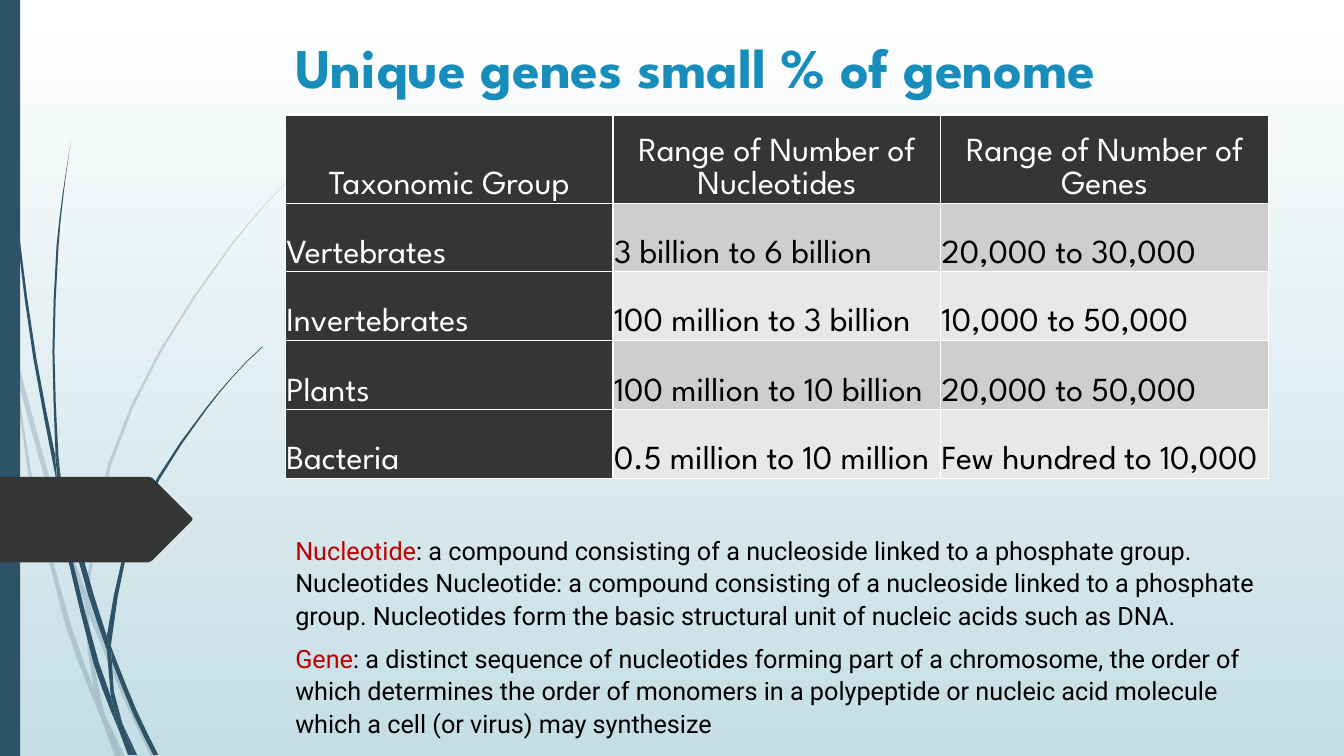
from dataclasses import dataclass
from math import dist
from typing import Any, NamedTuple

from lxml.etree import SubElement
from pptx import Presentation
from pptx.dml.color import RGBColor
from pptx.enum.shapes import MSO_SHAPE
from pptx.enum.text import MSO_ANCHOR, PP_ALIGN
from pptx.oxml import parse_xml
from pptx.oxml.ns import nsdecls, qn
from pptx.util import Inches, Pt

COLS, ROWS = 1333, 750
CELL = Inches(13.33) / COLS
LONG_BEND = 40
COLORS = {
    "white": "FFFFFF", "mist": "C5DEE5", "navy": "2E5369", "charcoal": "353535",
    "blue": "178DBB", "red": "C00000", "black": "000000",
    "band0": "CECECE", "band1": "E8E8E8",
}
FONTS = {
    "title": {"name": "League Spartan", "size": Pt(40), "bold": True},
    "table": {"name": "League Spartan", "size": Pt(24), "bold": False},
    "body": {"name": "Roboto", "size": Pt(18)},
}
CELL_FORMAT = {
    "vertical_anchor": MSO_ANCHOR.BOTTOM, "margin_left": Inches(0.01),
    "margin_right": Inches(0.01), "margin_top": Inches(0.01),
    "margin_bottom": Inches(0.01),
}
BODY_PARAGRAPH = {"line_spacing": 1.07, "space_after": Pt(8)}

Point = tuple[float, float]


class Area(NamedTuple):
    col: int
    row: int
    cols: int
    rows: int


class Run(NamedTuple):
    text: str
    color: str


@dataclass
class Outline:
    there: list[Point]
    back: list[Point]


PALE_GRASS = [
    Outline([(0, 282), (9, 322), (11, 350)], [(10, 344), (0, 299)]),
    Outline([(14, 345), (62, 520), (85, 586)], [(84, 599), (58, 522), (17, 376)]),
    Outline([(88, 596), (92, 607), (127, 692), (155, 751)],
            [(150, 751), (123, 694), (88, 610)]),
    Outline([(105, 711), (124, 751)], [(119, 751)]),
    Outline([(11, 350), (17, 376), (31, 469), (70, 619), (93, 683), (99, 707), (101, 714)],
            [(92, 693), (65, 621), (28, 470)]),
    Outline([(84, 599), (87, 646), (93, 683), (96, 692), (105, 711)],
            [(103, 706), (91, 646), (88, 610), (88, 608)]),
    Outline([(85, 586), (107, 461), (158, 348), (228, 244), (268, 197), (289, 175), (312, 153)],
            [(290, 175), (268, 198), (229, 245), (160, 349), (110, 462), (88, 584), (88, 596)]),
    Outline([(101, 714), (119, 751)], [(114, 751)]),
    Outline([(85, 586), (88, 596), (88, 610)], [(88, 608), (84, 599)]),
    Outline([(93, 683), (96, 692), (105, 711), (119, 751)], [(101, 714), (99, 707)]),
]
DARK_GRASS = [
    Outline([(3, 0), (4, 48), (7, 110), (17, 233), (33, 355), (56, 477), (57, 481)],
            [(55, 457), (55, 453), (36, 355), (19, 232), (8, 109), (5, 48), (4, 0)]),
    Outline([(60, 472), (93, 590), (106, 631), (106, 633)],
            [(106, 645), (88, 592), (64, 505)]),
    Outline([(110, 641), (113, 649), (136, 706), (157, 749)],
            [(152, 749), (132, 708), (111, 656)]),
    Outline([(57, 477), (64, 505), (72, 556), (98, 657), (110, 691), (116, 717), (117, 722)],
            [(111, 708), (93, 659), (68, 557)]),
    Outline([(60, 472), (58, 453), (54, 349), (58, 245), (63, 193), (70, 141)],
            [(62, 193), (56, 245), (52, 349), (55, 449)]),
    Outline([(122, 719), (136, 749)], [(133, 749)]),
    Outline([(55, 449), (60, 472), (64, 505)], [(57, 477), (55, 453)]),
    Outline([(106, 631), (122, 551), (156, 474), (204, 405), (231, 373), (245, 358), (260, 344)],
            [(261, 344), (245, 359), (231, 374), (205, 406), (158, 476), (125, 552),
             (111, 633), (110, 641)]),
    Outline([(117, 722), (131, 749)], [(127, 749)]),
    Outline([(106, 645), (109, 651), (111, 656), (113, 686), (121, 716), (122, 719)],
            [(116, 706), (110, 691)]),
    Outline([(106, 631), (110, 641), (111, 656)], [(109, 651), (106, 645)]),
    Outline([(110, 691), (116, 706), (122, 719), (133, 749)],
            [(130, 749), (117, 722), (116, 717)]),
]
PAGE_ARROW = Outline([(0, 473), (147, 473), (151, 474), (190, 513), (191, 515)],
                     [(190, 517), (151, 556), (147, 558), (0, 558)])

GENOMES = [
    ["Taxonomic Group", "Range of Number of Nucleotides", "Range of Number of Genes"],
    ["Vertebrates", "3 billion to 6 billion", "20,000 to 30,000"],
    ["Invertebrates", "100 million to 3 billion", "10,000 to 50,000"],
    ["Plants", "100 million to 10 billion", "20,000 to 50,000"],
    ["Bacteria", "0.5 million to 10 million", "Few hundred to 10,000"],
]
GENOME_ROWS = [87, 68, 68, 69, 68]
TITLE = [[Run("Unique genes small % of genome", "blue")]]
DEFINITIONS = [
    [Run("Nucleotide", "red"),
     Run(": a compound consisting of a nucleoside linked to a phosphate group. Nucleotides "
         "Nucleotide: a compound consisting of a nucleoside linked to a phosphate group. "
         "Nucleotides form the basic structural unit of nucleic acids such as DNA.", "black")],
    [Run("Gene", "red"),
     Run(": a distinct sequence of nucleotides forming part of a chromosome, the order of "
         "which determines the order of monomers in a polypeptide or nucleic acid molecule "
         "which a cell (or virus) may synthesize", "black")],
]


def rgb(name: str) -> RGBColor:
    return RGBColor.from_string(COLORS[name])


def emu(cells: float) -> int:
    return round(cells * CELL)


def apply(target: Any, values: dict[str, Any]) -> None:
    for name, value in values.items():
        setattr(target, name, value)


def paint(s: Any, color: str) -> None:
    s.shadow.inherit = False
    s.fill.solid()
    s.fill.fore_color.rgb = rgb(color)
    s.line.fill.background()


def bend(points: list[Point]) -> list[Point]:
    last = len(points) - 1
    slopes = []
    for i in range(len(points)):
        near = points[max(i - 1, 0):min(i + 1, last) + 1]
        span = sum(dist(a, b) for a, b in zip(near, near[1:])) or 1
        slopes.append([(b - a) / span for a, b in zip(near[0], near[-1])])
    curve = [points[0]]
    for i, (a, b) in enumerate(zip(points, points[1:])):
        length = dist(a, b)
        if length > LONG_BEND:
            x, y = ((a[k] + b[k]) / 2 + length * (slopes[i][k] - slopes[i + 1][k]) / 8
                    for k in (0, 1))
            curve.append((x, y))
        curve.append(b)
    return curve


def draw_outline(shapes: Any, points: list[Point], color: str) -> Any:
    corners = [(emu(x), emu(y)) for x, y in points]
    builder = shapes.build_freeform(*corners[0])
    builder.add_line_segments(corners[1:], close=True)
    s = builder.convert_to_shape()
    paint(s, color)
    return s


def draw_blade(shapes: Any, blade: Outline) -> Any:
    return draw_outline(shapes, bend(blade.there) + bend(blade.back), "navy")


def write(p: Any, runs: list[Run], font: str) -> None:
    for text, color in runs:
        r = p.add_run()
        r.text = text
        apply(r.font, FONTS[font])
        r.font.color.rgb = rgb(color)


def draw_text(shapes: Any, area: Area, paragraphs: list[list[Run]], font: str,
              anchor: MSO_ANCHOR, layout: dict[str, Any]) -> None:
    tf = shapes.add_textbox(*map(emu, area)).text_frame
    apply(tf, {"word_wrap": True, "vertical_anchor": anchor})
    for i, runs in enumerate(paragraphs):
        p = tf.add_paragraph() if i else tf.paragraphs[0]
        apply(p, layout)
        write(p, runs, font)


def add_borders(cell: Any) -> None:
    tc_pr = cell._tc.get_or_add_tcPr()
    for i, side in enumerate("LRTB"):
        tc_pr.insert(i, parse_xml(
            f'<a:ln{side} {nsdecls("a")} w="{Pt(1)}"><a:solidFill>'
            f'<a:srgbClr val="{COLORS["white"]}"/></a:solidFill></a:ln{side}>'))


def draw_table(shapes: Any, area: Area) -> None:
    table = shapes.add_table(len(GENOMES), len(GENOMES[0]), *map(emu, area)).table
    for row, height in zip(table.rows, GENOME_ROWS):
        row.height = emu(height)
    for i, values in enumerate(GENOMES):
        for j, text in enumerate(values):
            cell = table.cell(i, j)
            heading = i == 0 or j == 0
            apply(cell, CELL_FORMAT)
            cell.fill.solid()
            cell.fill.fore_color.rgb = rgb("charcoal" if heading else f"band{(i - 1) % 2}")
            add_borders(cell)
            p = cell.text_frame.paragraphs[0]
            apply(p, {"line_spacing": 1.07,
                      "alignment": PP_ALIGN.LEFT if i else PP_ALIGN.CENTER})
            write(p, [Run(text, "white" if heading else "black")], "table")


def main() -> None:
    prs = Presentation()
    apply(prs, {"slide_width": emu(COLS), "slide_height": emu(ROWS)})
    slide = prs.slides.add_slide(prs.slide_layouts[6])
    fill = slide.background.fill
    fill.gradient()
    fill.gradient_angle = 270
    for stop, color in zip(fill.gradient_stops, ("white", "mist")):
        stop.color.rgb = rgb(color)
    shapes = slide.shapes
    for blade in PALE_GRASS:
        s = draw_blade(shapes, blade)
        tint = s._element.spPr.find(qn("a:solidFill"))[0]
        SubElement(tint, qn("a:alpha"), val="20000")
    for blade in DARK_GRASS:
        draw_blade(shapes, blade)
    paint(shapes.add_shape(MSO_SHAPE.RECTANGLE, *map(emu, Area(0, 0, 20, ROWS))), "navy")
    draw_outline(shapes, PAGE_ARROW.there + PAGE_ARROW.back, "charcoal")
    draw_text(shapes, Area(283, 25, 975, 79), TITLE, "title", MSO_ANCHOR.BOTTOM, {})
    draw_table(shapes, Area(283, 114, 975, sum(GENOME_ROWS)))
    draw_text(shapes, Area(283, 524, 975, 214), DEFINITIONS, "body", MSO_ANCHOR.TOP,
              BODY_PARAGRAPH)
    prs.save("out.pptx")


if __name__ == "__main__":
    main()
